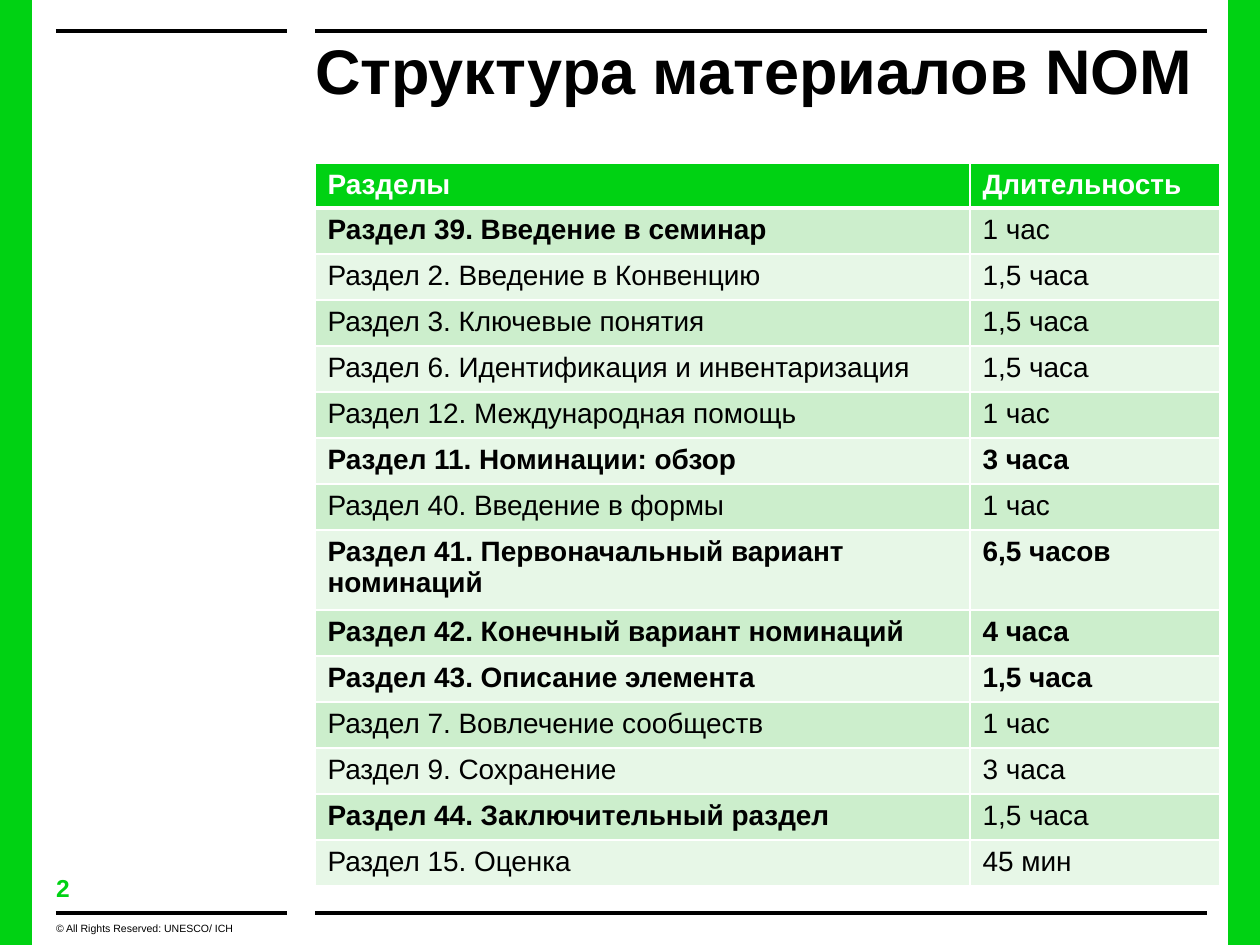
"""Build the slide listing the sections of the NOM materials and their durations."""
from typing import NamedTuple

from lxml.etree import SubElement
from pptx import Presentation
from pptx.dml.color import RGBColor
from pptx.enum.shapes import MSO_CONNECTOR, MSO_SHAPE
from pptx.oxml.ns import qn
from pptx.util import Emu, Pt

GREEN, BLACK, WHITE = "00D213", "000000", "FFFFFF"
BANDS = ("CCEECC", "E7F7E7")
FONT = "Arial"
SLIDE_W, SLIDE_H = 1260, 945
HEADER_H, ROW_H, TALL_ROW_H = 45, 46, 80


class Label(NamedTuple):
    x: int
    y: int
    w: int
    h: int
    text: str
    size: int
    color: str
    bold: bool


class Section(NamedTuple):
    name: str
    duration: str
    name_bold: bool = False
    duration_bold: bool = False
    height: int = ROW_H


LABELS = [
    Label(56, 873, 144, 30, "2", 14, GREEN, True),
    Label(56, 922, 231, 23, "© All Rights Reserved: UNESCO/ ICH", 6, BLACK, False),
    Label(315, 31, 927, 105, "Структура материалов NOM", 36, BLACK, True),
]

SECTIONS = [
    Section("Раздел 39. Введение в семинар", "1 час", True),
    Section("Раздел 2. Введение в Конвенцию", "1,5 часа"),
    Section("Раздел 3. Ключевые понятия", "1,5 часа"),
    Section("Раздел 6. Идентификация и инвентаризация", "1,5 часа"),
    Section("Раздел 12. Международная помощь", "1 час"),
    Section("Раздел 11. Номинации: обзор", "3 часа", True, True),
    Section("Раздел 40. Введение в формы", "1 час"),
    Section("Раздел 41. Первоначальный вариант номинаций", "6,5 часов", True, True, TALL_ROW_H),
    Section("Раздел 42. Конечный вариант номинаций", "4 часа", True, True),
    Section("Раздел 43. Описание элемента", "1,5 часа", True, True),
    Section("Раздел 7. Вовлечение сообществ", "1 час"),
    Section("Раздел 9. Сохранение", "3 часа"),
    Section("Раздел 44. Заключительный раздел", "1,5 часа", True),
    Section("Раздел 15. Оценка", "45 мин"),
]


def px(n: int) -> Emu:
    """Turn pixels into EMU."""
    return Emu(round(n * 914400 / 126))


def rgb(color: str) -> RGBColor:
    """Turn a hex string into a colour."""
    return RGBColor.from_string(color)


def write(tf, text: str, size: int, color: str, bold: bool) -> None:
    """Write one styled paragraph into a text frame."""
    p = tf.paragraphs[0]
    p.text = text
    p.font.name, p.font.size, p.font.bold = FONT, Pt(size), bold
    p.font.color.rgb = rgb(color)


def add_bar(slide, x: int) -> None:
    """Add a green bar down the slide edge."""
    sp = slide.shapes.add_shape(MSO_SHAPE.RECTANGLE, px(x), 0, px(32), px(SLIDE_H))
    sp.shadow.inherit = False
    sp.fill.solid()
    sp.fill.fore_color.rgb = rgb(GREEN)
    sp.line.fill.background()


def add_rule(slide, x1: int, x2: int, y: int) -> None:
    """Add a horizontal black rule."""
    line = slide.shapes.add_connector(MSO_CONNECTOR.STRAIGHT, px(x1), px(y), px(x2), px(y))
    line.line.width = Pt(2)
    line.line.color.rgb = rgb(BLACK)
    SubElement(line._element.spPr, qn("a:effectLst"))


def add_label(slide, label: Label) -> None:
    """Add a text box without margins."""
    sp = slide.shapes.add_textbox(px(label.x), px(label.y), px(label.w), px(label.h))
    tf = sp.text_frame
    tf.word_wrap = True
    tf.margin_left = tf.margin_right = tf.margin_top = tf.margin_bottom = 0
    write(tf, label.text, label.size, label.color, label.bold)


def set_borders(cell, top: int, bottom: int) -> None:
    """Give a cell white borders, with top and bottom widths in points."""
    tc_pr = cell._tc.get_or_add_tcPr()
    for side, width in (("L", 1), ("R", 1), ("T", top), ("B", bottom)):
        ln = SubElement(tc_pr, qn(f"a:ln{side}"), w=str(Pt(width)))
        SubElement(SubElement(ln, qn("a:solidFill")), qn("a:srgbClr"), val=WHITE)


def add_sections(slide, sections: list[Section]) -> None:
    """Add the table of sections under a green header."""
    rows = [Section("Разделы", "Длительность", True, True, HEADER_H), *sections]
    height = sum(row.height for row in rows)
    table = slide.shapes.add_table(len(rows), 2, px(315), px(163), px(905), px(height)).table
    for column, width in zip(table.columns, (655, 250)):
        column.width = px(width)
    for i, row in enumerate(rows):
        table.rows[i].height = px(row.height)
        fill, color = (BANDS[(i - 1) % 2], BLACK) if i else (GREEN, WHITE)
        texts = ((row.name, row.name_bold), (row.duration, row.duration_bold))
        for j, (text, bold) in enumerate(texts):
            cell = table.cell(i, j)
            set_borders(cell, 3 if i == 1 else 1, 3 if i == 0 else 1)
            cell.fill.solid()
            cell.fill.fore_color.rgb = rgb(fill)
            write(cell.text_frame, text, 16, color, bold)


def main() -> None:
    """Build and save the slide."""
    prs = Presentation()
    prs.slide_width, prs.slide_height = px(SLIDE_W), px(SLIDE_H)
    s = prs.slides.add_slide(prs.slide_layouts[6])
    for x in (0, SLIDE_W - 32):
        add_bar(s, x)
    for y in (31, 913):
        add_rule(s, 56, 287, y)
        add_rule(s, 315, 1207, y)
    add_sections(s, SECTIONS)
    for label in LABELS:
        add_label(s, label)
    prs.save("out.pptx")


if __name__ == "__main__":
    main()
